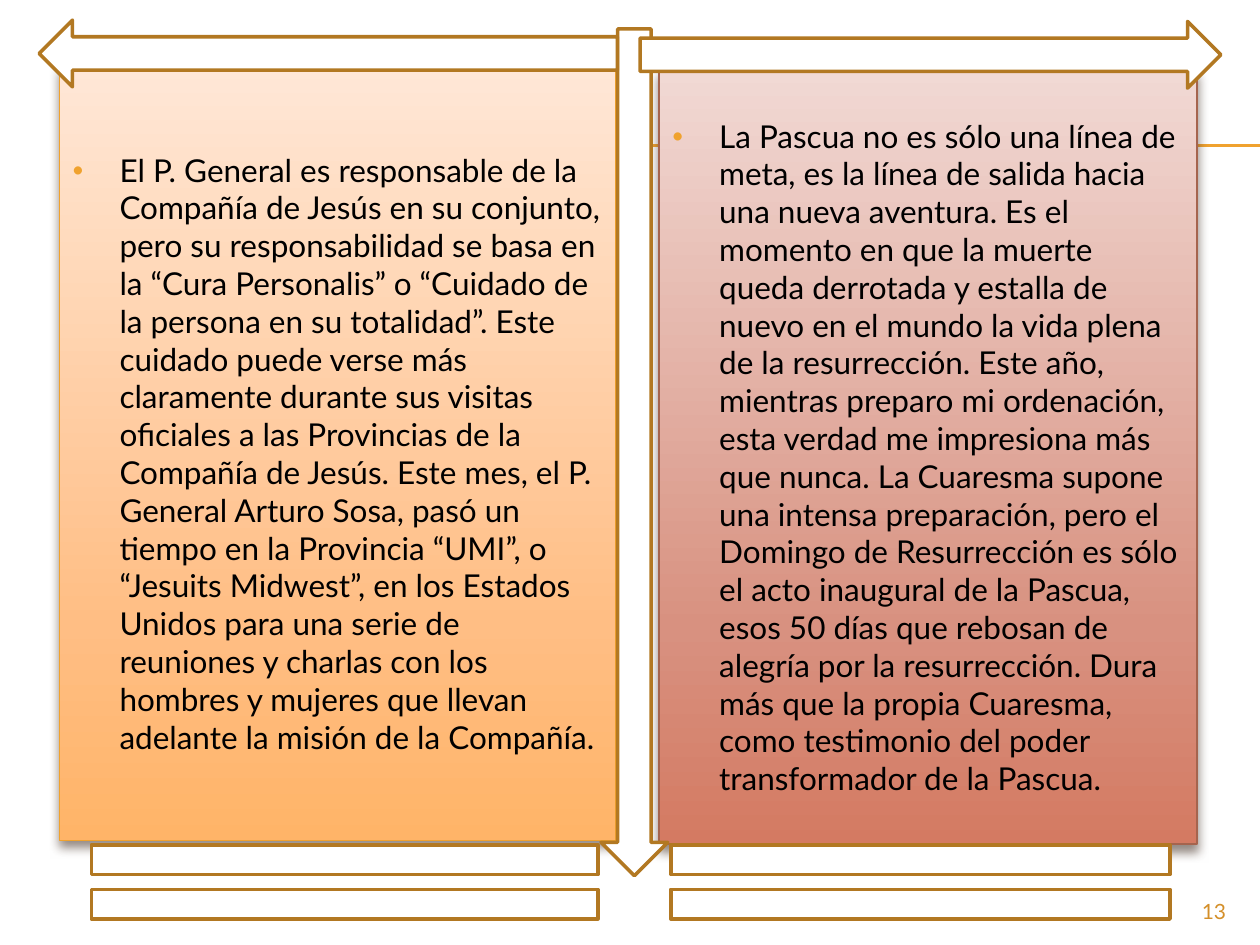
from lxml import etree
from pptx import Presentation
from pptx.dml.color import RGBColor
from pptx.enum.shapes import MSO_CONNECTOR, MSO_SHAPE
from pptx.enum.text import MSO_ANCHOR, PP_ALIGN
from pptx.oxml.ns import qn
from pptx.util import Inches, Pt

STRAIGHT = MSO_CONNECTOR.STRAIGHT
RECTANGLE = MSO_SHAPE.RECTANGLE
DOWN_ARROW = MSO_SHAPE.DOWN_ARROW
RIGHT_ARROW = MSO_SHAPE.RIGHT_ARROW
LEFT_ARROW = MSO_SHAPE.LEFT_ARROW
EQUAL_SIGN = MSO_SHAPE.MATH_EQUAL
MIDDLE, TOP = MSO_ANCHOR.MIDDLE, MSO_ANCHOR.TOP
LEFT, RIGHT = PP_ALIGN.LEFT, PP_ALIGN.RIGHT

WHITE = RGBColor(0xFF, 0xFF, 0xFF)
BLACK = RGBColor(0x00, 0x00, 0x00)
AMBER = RGBColor(0xF0, 0xA2, 0x2E)
BRONZE = RGBColor(0xB2, 0x78, 0x22)
OCHRE = RGBColor(0xD4, 0x8F, 0x29)
BRICK = RGBColor(0xA5, 0x64, 0x4E)
SHADOW = RGBColor(0x4E, 0x3B, 0x30)
ORANGE_STOPS = (
    (0, RGBColor(0xFF, 0xE7, 0xD7)),
    (72, RGBColor(0xFF, 0xBE, 0x84)),
    (100, RGBColor(0xFF, 0xB4, 0x68)),
)
RED_STOPS = (
    (0, RGBColor(0xF1, 0xD9, 0xD4)),
    (72, RGBColor(0xD8, 0x91, 0x80)),
    (100, RGBColor(0xD4, 0x7A, 0x62)),
)

GENERAL_TEXT = (
    "El P. General es responsable de la Compañía de Jesús en su conjunto, pero su "
    "responsabilidad se basa en la “Cura Personalis” o “Cuidado de la persona en su "
    "totalidad”. Este cuidado puede verse más claramente durante sus visitas oficiales "
    "a las Provincias de la Compañía de Jesús. Este mes, el P. General Arturo Sosa, "
    "pasó un tiempo en la Provincia “UMI”, o “Jesuits Midwest”, en los Estados Unidos "
    "para una serie de reuniones y charlas con los hombres y mujeres que llevan "
    "adelante la misión de la Compañía."
)
EASTER_TEXT = (
    "La Pascua no es sólo una línea de meta, es la línea de salida hacia una nueva "
    "aventura. Es el momento en que la muerte queda derrotada y estalla de nuevo en el "
    "mundo la vida plena de la resurrección. Este año, mientras preparo mi ordenación, "
    "esta verdad me impresiona más que nunca. La Cuaresma supone una intensa "
    "preparación, pero el Domingo de Resurrección es sólo el acto inaugural de la "
    "Pascua, esos 50 días que rebosan de alegría por la resurrección. Dura más que la "
    "propia Cuaresma, como testimonio del poder transformador de la Pascua."
)


def add_element(parent, tag, **attributes):
    element = etree.SubElement(parent, qn(tag))
    for name, value in attributes.items():
        element.set(name, str(value))
    return element


def add_color(parent, color):
    return add_element(parent, "a:srgbClr", val=color)


class SlideBuilder:
    font_name = "Lato"

    def __init__(self, slide):
        self.slide = slide

    def rule(self, left, right, top):
        line = self.slide.shapes.add_connector(
            STRAIGHT, Inches(left), Inches(top), Inches(right), Inches(top))
        line.line.color.rgb = AMBER
        line.line.width = Pt(0.75)
        add_element(line._element.spPr, "a:effectLst")

    def outline(self, kind, box, color=BRONZE, width=2):
        """Add a white preset shape with a coloured outline."""
        shape = self.slide.shapes.add_shape(kind, *map(Inches, box))
        shape.shadow.inherit = False
        shape.fill.solid()
        shape.fill.fore_color.rgb = WHITE
        shape.line.color.rgb = color
        shape.line.width = Pt(width)
        return shape

    def panel(self, box, stops, line_color, text):
        """Add a shaded, shadowed rectangle holding one bulleted paragraph."""
        shape = self.outline(RECTANGLE, box, line_color, 0.79)
        shape.fill.gradient()
        shape.fill.gradient_angle = 270
        properties = shape._element.spPr
        stop_list = properties.find(".//" + qn("a:gsLst"))
        for old_stop in list(stop_list):
            stop_list.remove(old_stop)
        for position, color in stops:
            add_color(add_element(stop_list, "a:gs", pos=position * 1000), color)
        shadow = add_element(
            properties.find(qn("a:effectLst")), "a:outerShdw", blurRad=Pt(6),
            dist=Pt(4), dir=90 * 60000, rotWithShape=0)
        add_element(add_color(shadow, SHADOW), "a:alpha", val=60000)
        self.bullet(shape.text_frame.paragraphs[0])
        self.fill_text(shape, text, 18, BLACK, LEFT, MIDDLE)

    def bullet(self, paragraph):
        properties = paragraph._p.get_or_add_pPr()
        properties.set("marL", str(Inches(0.38)))
        properties.set("indent", str(Inches(-0.38)))
        add_color(add_element(properties, "a:buClr"), AMBER)
        add_element(properties, "a:buSzPct", val=70000)
        add_element(properties, "a:buFont", typeface=self.font_name)
        add_element(properties, "a:buChar", char="•")

    def label(self, box, text, size, color, alignment):
        shape = self.slide.shapes.add_textbox(*map(Inches, box))
        self.fill_text(shape, text, size, color, alignment, TOP)

    def fill_text(self, shape, text, size, color, alignment, anchor):
        frame = shape.text_frame
        frame.word_wrap = True
        frame.vertical_anchor = anchor
        paragraph = frame.paragraphs[0]
        paragraph.alignment = alignment
        run = paragraph.add_run()
        run.text = text
        font_format = {"name": self.font_name, "size": Pt(size)}
        for name, value in font_format.items():
            setattr(run.font, name, value)
        run.font.color.rgb = color


def main():
    presentation = Presentation()
    presentation.slide_width = Inches(10)
    presentation.slide_height = Inches(7.5)
    builder = SlideBuilder(presentation.slides.add_slide(presentation.slide_layouts[6]))

    for top in (1.15, 1.16):
        builder.rule(0.56, 10, top)

    builder.panel((0.47, 0.52, 4.42, 6.15), ORANGE_STOPS, AMBER, GENERAL_TEXT)
    builder.panel((5.23, 0.55, 4.27, 6.15), RED_STOPS, BRICK, EASTER_TEXT)

    for kind, box in (
        (DOWN_ARROW, (4.77, 0.23, 0.53, 6.72)),
        (RIGHT_ARROW, (5.08, 0.17, 4.61, 0.53)),
        (LEFT_ARROW, (0.31, 0.16, 4.59, 0.53)),
        (EQUAL_SIGN, (0, 6.5, 5.47, 1)),
        (EQUAL_SIGN, (4.61, 6.5, 5.39, 1)),
    ):
        builder.outline(kind, box)

    builder.label((9, 7.08, 0.83, 0.27), "13", 12, OCHRE, RIGHT)
    presentation.save("out.pptx")


if __name__ == "__main__":
    main()
